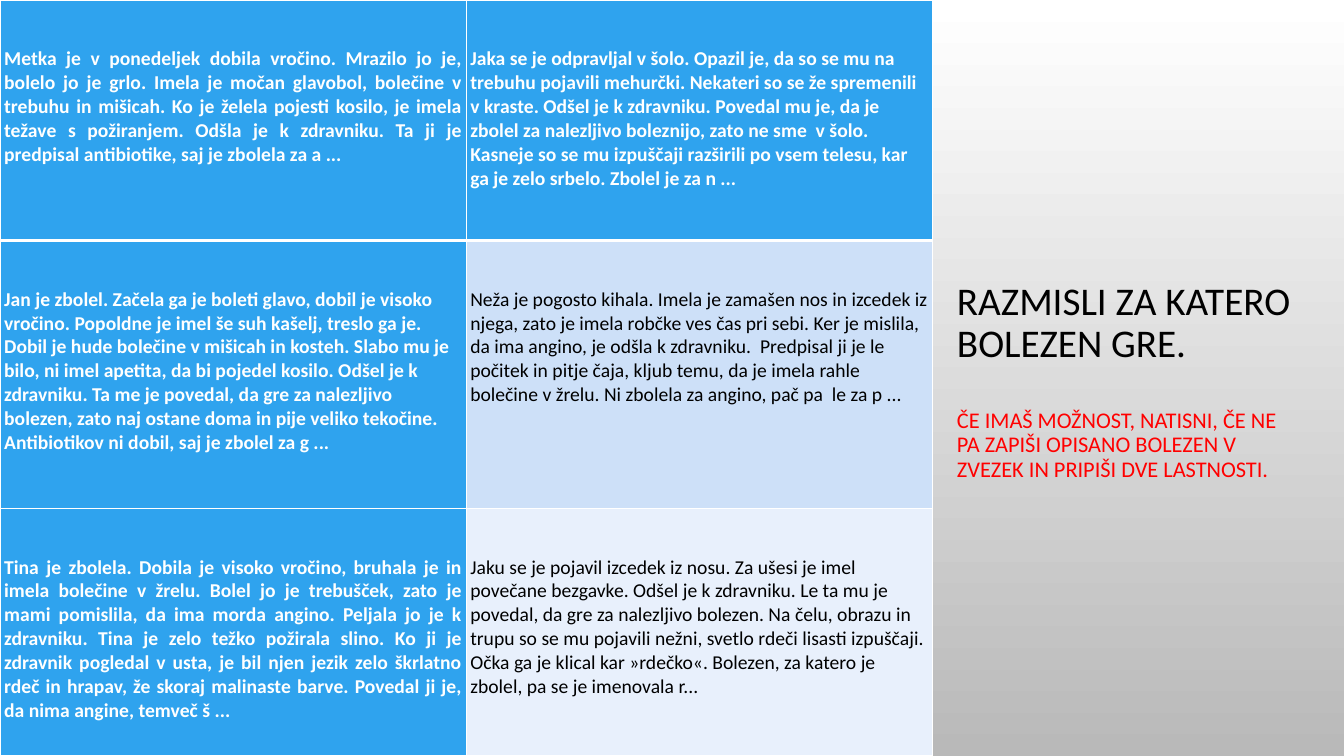
from dataclasses import dataclass

from lxml.etree import SubElement
from pptx import Presentation
from pptx.dml.color import RGBColor
from pptx.enum.text import MSO_ANCHOR, PP_ALIGN
from pptx.oxml.ns import qn
from pptx.util import Pt

EMU_PER_PX = 9525
SLIDE_W, SLIDE_H = 1280, 720
COL_WIDTHS = (444, 444)
ROW_HEIGHTS = (229, 255, 236)
CELL_SIDE, CELL_TOP = 4, 45


@dataclass(frozen=True)
class Theme:
    font: str = "Calibri"
    title_size: int = 28
    task_size: int = 16
    cell_size: int = 14
    black: str = "000000"
    white: str = "FFFFFF"
    red: str = "FF0000"
    blue: str = "2FA3EE"
    pale_blue: str = "CDE0F8"
    palest_blue: str = "E8F0FC"
    background_end: str = "B9B9B9"


THEME = Theme()

METKA = (
    "Metka je v ponedeljek dobila vročino. Mrazilo jo je, bolelo jo je grlo. "
    "Imela je močan glavobol, bolečine v trebuhu in mišicah. Ko je želela pojesti "
    "kosilo, je imela težave s požiranjem. Odšla je k zdravniku. Ta ji je predpisal "
    "antibiotike, saj je zbolela za a ..."
)
JAKA = (
    "Jaka se je odpravljal v šolo. Opazil je, da so se mu na trebuhu pojavili "
    "mehurčki. Nekateri so se že spremenili v kraste. Odšel je k zdravniku. Povedal "
    "mu je, da je zbolel za nalezljivo boleznijo, zato ne sme  v šolo. Kasneje so se "
    "mu izpuščaji razširili po vsem telesu, kar ga je zelo srbelo. Zbolel je za n ..."
)
JAN = (
    "Jan je zbolel. Začela ga je boleti glavo, dobil je visoko vročino. Popoldne je "
    "imel še suh kašelj, treslo ga je. Dobil je hude bolečine v mišicah in kosteh. "
    "Slabo mu je bilo, ni imel apetita, da bi pojedel kosilo. Odšel je k zdravniku. "
    "Ta me je povedal, da gre za nalezljivo bolezen, zato naj ostane doma in pije "
    "veliko tekočine. Antibiotikov ni dobil, saj je zbolel za g ..."
)
NEZA = (
    "Neža je pogosto kihala. Imela je zamašen nos in izcedek iz njega, zato je imela "
    "robčke ves čas pri sebi. Ker je mislila, da ima angino, je odšla k zdravniku.  "
    "Predpisal ji je le počitek in pitje čaja, kljub temu, da je imela rahle bolečine "
    "v žrelu. Ni zbolela za angino, pač pa  le za p ..."
)
TINA = (
    "Tina je zbolela. Dobila je visoko vročino, bruhala je in imela bolečine v žrelu. "
    "Bolel jo je trebušček, zato je mami pomislila, da ima morda angino. Peljala jo je "
    "k zdravniku. Tina je zelo težko požirala slino. Ko ji je zdravnik pogledal v usta, "
    "je bil njen jezik zelo škrlatno rdeč in hrapav, že skoraj malinaste barve. "
    "Povedal ji je, da nima angine, temveč š ..."
)
JAKU = (
    "Jaku se je pojavil izcedek iz nosu. Za ušesi je imel povečane bezgavke. Odšel je "
    "k zdravniku. Le ta mu je povedal, da gre za nalezljivo bolezen. Na čelu, obrazu in "
    "trupu so se mu pojavili nežni, svetlo rdeči lisasti izpuščaji. Očka ga je klical "
    "kar »rdečko«. Bolezen, za katero je zbolel, pa se je imenovala r..."
)

# Each cell: text, fill, justified
STORIES = (
    ((METKA, THEME.blue, True), (JAKA, THEME.blue, False)),
    ((JAN, THEME.blue, False), (NEZA, THEME.pale_blue, False)),
    ((TINA, THEME.blue, True), (JAKU, THEME.palest_blue, False)),
)


def px(n):
    return n * EMU_PER_PX


def rgb(color):
    return RGBColor.from_string(color)


def write(p, text, size, color, bold=False, align=PP_ALIGN.LEFT, spacing=None, before=None):
    p.alignment = align
    p.line_spacing = spacing
    if before is not None:
        p.space_before = Pt(before)
    r = p.add_run()
    r.text = text
    r.font.name = THEME.font
    r.font.size = Pt(size)
    r.font.bold = bold
    r.font.color.rgb = rgb(color)


def set_background(s):
    fill = s.background.fill
    fill.gradient()
    fill.gradient_angle = 270
    for stop, color in zip(fill.gradient_stops, (THEME.white, THEME.background_end)):
        stop.color.rgb = rgb(color)


def set_borders(cell, **widths):
    """Draw white borders; keys are L, R, T, B and values are points."""
    tcPr = cell._tc.get_or_add_tcPr()
    for side, width in widths.items():
        ln = SubElement(tcPr, qn(f"a:ln{side}"), w=str(Pt(width)))
        fill = SubElement(ln, qn("a:solidFill"))
        SubElement(fill, qn("a:srgbClr"), val=THEME.white)


def fill_cell(cell, text, fill, justified, top, bottom):
    set_borders(cell, L=1, R=1, T=top, B=bottom)
    cell.fill.solid()
    cell.fill.fore_color.rgb = rgb(fill)
    cell.margin_left = cell.margin_right = px(CELL_SIDE)
    cell.margin_top, cell.margin_bottom = px(CELL_TOP), 0
    on_blue = fill == THEME.blue
    write(
        cell.text_frame.paragraphs[0],
        text,
        THEME.cell_size,
        THEME.white if on_blue else THEME.black,
        bold=on_blue,
        align=PP_ALIGN.JUSTIFY if justified else PP_ALIGN.LEFT,
    )


def add_stories(s):
    frame = s.shapes.add_table(
        len(ROW_HEIGHTS), len(COL_WIDTHS), 0, 0, px(sum(COL_WIDTHS)), px(sum(ROW_HEIGHTS))
    )
    table = frame.table
    table.horz_banding = False
    for column, width in zip(table.columns, COL_WIDTHS):
        column.width = px(width)
    for row, height in zip(table.rows, ROW_HEIGHTS):
        row.height = px(height)
    for i, stories in enumerate(STORIES):
        top, bottom = (3 if i == 1 else 1), (3 if i == 0 else 1)
        for j, (text, fill, justified) in enumerate(stories):
            fill_cell(table.cell(i, j), text, fill, justified, top, bottom)


def add_task(s):
    tf = s.shapes.add_textbox(px(902), px(65), px(338), px(597)).text_frame
    tf.word_wrap = True
    tf.vertical_anchor = MSO_ANCHOR.MIDDLE
    write(
        tf.paragraphs[0],
        "RAZMISLI ZA KATERO BOLEZEN GRE.",
        THEME.title_size,
        THEME.black,
        spacing=0.9,
    )
    write(
        tf.add_paragraph(),
        "ČE IMAŠ MOŽNOST, NATISNI, ČE NE PA ZAPIŠI OPISANO BOLEZEN V ZVEZEK "
        "IN PRIPIŠI DVE LASTNOSTI.",
        THEME.task_size,
        THEME.red,
        spacing=0.9,
        before=31,
    )


def main():
    prs = Presentation()
    prs.slide_width, prs.slide_height = px(SLIDE_W), px(SLIDE_H)
    s = prs.slides.add_slide(prs.slide_layouts[6])
    set_background(s)
    add_task(s)
    add_stories(s)
    prs.save("out.pptx")


if __name__ == "__main__":
    main()
